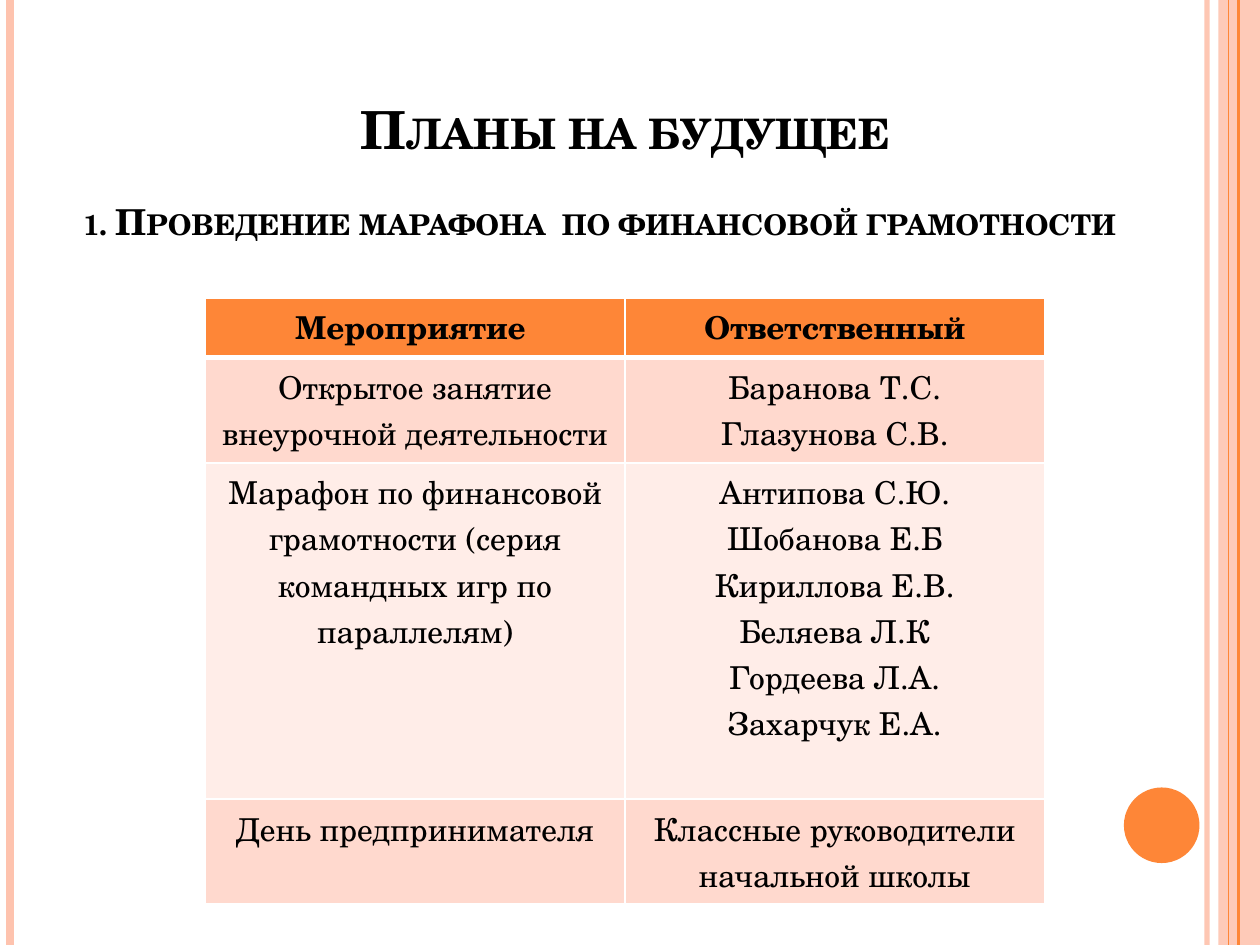
from lxml.etree import SubElement
from pptx import Presentation
from pptx.dml.color import RGBColor
from pptx.enum.shapes import MSO_CONNECTOR, MSO_SHAPE
from pptx.enum.text import MSO_ANCHOR, MSO_AUTO_SIZE, PP_ALIGN
from pptx.oxml.ns import qn
from pptx.util import Inches, Pt

ORANGE, PEACH, WHITE, BLACK = "FE8637", "FEC3AE", "FFFFFF", "000000"


def paint(color_format, value, opacity=100):
    """Set a colour from a hex string, with opacity in percent."""
    color_format.rgb = RGBColor.from_string(value)
    if opacity < 100:
        for node in color_format._xFill.iter(qn("a:srgbClr")):
            SubElement(node, qn("a:alpha"), val=str(opacity * 1000))


def write(text_frame, text, size, bold, small_caps=False, line_spacing=None):
    text_frame.text = text
    font_format = {"name": "TeX Gyre Schola", "size": Pt(size), "bold": bold}
    for paragraph in text_frame.paragraphs:
        paragraph.alignment = PP_ALIGN.CENTER
        paragraph.line_spacing = line_spacing
        for run in paragraph.runs:
            for name, value in font_format.items():
                setattr(run.font, name, value)
            paint(run.font.color, BLACK)
            if small_caps:
                run._r.get_or_add_rPr().set("cap", "small")


presentation = Presentation()
presentation.slide_width, presentation.slide_height = Inches(10), Inches(7.5)
slide = presentation.slides.add_slide(presentation.slide_layouts[5])
shapes = slide.shapes

# Side stripes and the circle: x, colour, width, opacity
stripes = [
    (9.58, PEACH, 3, 93),
    (0.08, PEACH, 4.5, 100),
    (9.83, ORANGE, 1.5, 100),
    (9.75, ORANGE, 0.75, 100),
]
decorations = [
    (MSO_SHAPE.RECTANGLE, (9.67, 0, 0.33, 7.5), PEACH, 87),
    (MSO_SHAPE.OVAL, (8.92, 6.25, 0.6, 0.6), ORANGE, 100),
]
for kind, box, color, opacity in decorations:
    shape = shapes.add_shape(kind, *map(Inches, box))
    shape.shadow.inherit = False
    shape.fill.solid()
    paint(shape.fill.fore_color, color, opacity)
    shape.line.fill.background()
for x, color, width, opacity in stripes:
    stripe = shapes.add_connector(
        MSO_CONNECTOR.STRAIGHT, Inches(x), 0, Inches(x), Inches(7.5))
    stripe.line.width = Pt(width)
    paint(stripe.line.color, color, opacity)
    SubElement(stripe._element.spPr, qn("a:effectLst"))

# Title and subtitle
title = shapes.title
title.left, title.top, title.width, title.height = map(Inches, (0.99, 0.68, 7.95, 0.64))
write(title.text_frame, "Планы на будущее", 30, True, small_caps=True)

subtitle = shapes.add_textbox(*map(Inches, (0.43, 1.68, 8.66, 0.64)))
write(subtitle.text_frame, "1. Проведение марафона  по финансовой грамотности",
      20.4, True, small_caps=True)
frame_format = {
    "word_wrap": True,
    "auto_size": MSO_AUTO_SIZE.NONE,
    "vertical_anchor": MSO_ANCHOR.BOTTOM,
}
for text_frame in (title.text_frame, subtitle.text_frame):
    for name, value in frame_format.items():
        setattr(text_frame, name, value)
subtitle.text_frame.margin_bottom = Inches(0.39)

# Table of events
rows = [
    ("Мероприятие ", "Ответственный"),
    ("Открытое занятие внеурочной деятельности", "Баранова Т.С.\nГлазунова С.В."),
    ("Марафон по финансовой грамотности (серия командных игр по параллелям)",
     "Антипова С.Ю.\nШобанова Е.Б\nКириллова Е.В.\nБеляева Л.К\nГордеева Л.А.\nЗахарчук Е.А."),
    ("День предпринимателя", "Классные руководители\nначальной школы"),
]
row_heights = [0.47, 0.83, 2.67, 0.83]
row_fills = [ORANGE, "FFD9CE", "FFEDE8", "FFD9CE"]
table = shapes.add_table(
    len(rows), 2, *map(Inches, (1.63, 2.37, 6.66, sum(row_heights)))).table
table.horz_banding = False
for column in table.columns:
    column.width = Inches(3.33)

for row_index, texts in enumerate(rows):
    table.rows[row_index].height = Inches(row_heights[row_index])
    border_widths = {
        "a:lnL": 1,
        "a:lnR": 1,
        "a:lnT": 3 if row_index == 1 else 1,
        "a:lnB": 3 if row_index == 0 else 1,
    }
    for column_index, text in enumerate(texts):
        cell = table.cell(row_index, column_index)
        write(cell.text_frame, text, 18, row_index == 0, line_spacing=Pt(26.4))
        properties = cell._tc.get_or_add_tcPr()
        for tag, width in border_widths.items():
            border = SubElement(properties, qn(tag), w=str(Pt(width)))
            SubElement(SubElement(border, qn("a:solidFill")), qn("a:srgbClr"), val=WHITE)
        cell.fill.solid()
        paint(cell.fill.fore_color, row_fills[row_index])

presentation.save("out.pptx")
